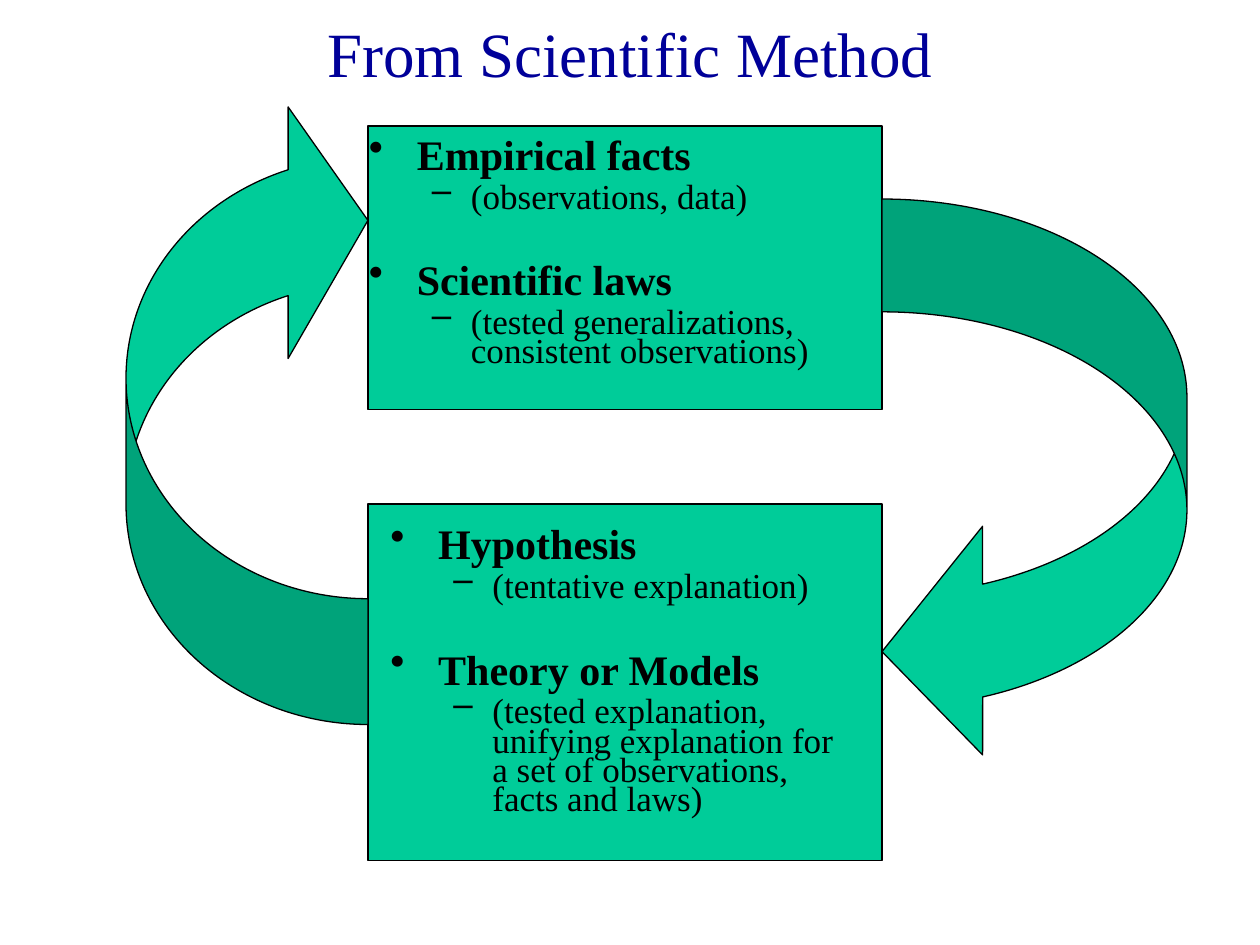
"""Build the scientific method cycle slide."""
import pptx
import pptx.util
import pptx.dml.color
import pptx.enum.shapes
import pptx.enum.text
import lxml.etree

COLORS = {"title": "000099", "fill": "00CC99", "ink": "000000"}
FONT = "Times New Roman"
TITLE = "From Scientific Method"
SHAPES = [
    ("RECTANGLE", (2.92, 4, 4.08, 2.83), 0, ()),
    ("RECTANGLE", (2.92, 1, 4.08, 2.25), 0, ()),
    ("CURVED_LEFT_ARROW", (7, 1.58, 2.42, 4.5), 0, (0.37, 0.75, 0.33)),
    ("CURVED_LEFT_ARROW", (1, 0.75, 1.92, 5), 180, (0.52, 1.04, 0.33)),
]
LISTS = [
    ((2.83, 1.08, 4, 2.17), [
        ("Empirical facts", "(observations, data)"),
        ("Scientific laws", "(tested generalizations, consistent observations)"),
    ]),
    ((3, 4.17, 3.83, 2.67), [
        ("Hypothesis", "(tentative explanation)"),
        ("Theory or Models", "(tested explanation, unifying explanation for "
                             "a set of observations, facts and laws)"),
    ]),
]
LEVELS = [
    {"size": 24, "bold": True, "bullet": "•", "margin": 0.38, "hang": 0.38},
    {"size": 20, "bold": False, "bullet": "–", "margin": 0.81, "hang": 0.31},
]
LINE_SPACING = 0.7
GROUP_GAP = 30


def rgb(name):
    return pptx.dml.color.RGBColor.from_string(COLORS[name])


def inches(values):
    return [pptx.util.Inches(v) for v in values]


def add_shape(slide, kind, box, rotation, adjustments):
    preset = getattr(pptx.enum.shapes.MSO_SHAPE, kind)
    sp = slide.shapes.add_shape(preset, *inches(box))
    sp.shadow.inherit = False
    sp.fill.solid()
    sp.fill.fore_color.rgb = rgb("fill")
    sp.line.color.rgb = rgb("ink")
    sp.line.width = pptx.util.Pt(0.75)
    sp.rotation = rotation
    for i, value in enumerate(adjustments):
        sp.adjustments[i] = value


def add_frame(slide, box):
    tf = slide.shapes.add_textbox(*inches(box)).text_frame
    tf.word_wrap = True
    return tf


def write(p, text, size, color="ink", bold=False, align="LEFT", before=0,
          spacing=1.0, bullet=None, margin=0, hang=0):
    p.alignment = getattr(pptx.enum.text.PP_ALIGN, align)
    p.space_before = pptx.util.Pt(before)
    p.line_spacing = spacing
    r = p.add_run()
    r.text = text
    r.font.name = FONT
    r.font.size = pptx.util.Pt(size)
    r.font.bold = bold
    r.font.color.rgb = rgb(color)
    if bullet:
        pPr = p._p.get_or_add_pPr()
        pPr.set("marL", str(pptx.util.Inches(margin)))
        pPr.set("indent", str(-pptx.util.Inches(hang)))
        tag = pptx.oxml.ns.qn("a:buChar")
        lxml.etree.SubElement(pPr, tag).set("char", bullet)


def add_list(slide, box, groups):
    tf = add_frame(slide, box)
    p = tf.paragraphs[0]
    for i, group in enumerate(groups):
        for level, text in enumerate(group):
            if i or level:
                p = tf.add_paragraph()
            p.level = level
            style = LEVELS[level]
            new_group = i > 0 and level == 0
            before = GROUP_GAP if new_group else 0.23 * style["size"]
            write(p, text, before=before, spacing=LINE_SPACING, **style)


def main():
    prs = pptx.Presentation()
    prs.slide_width, prs.slide_height = inches((10, 7.5))
    slide = prs.slides.add_slide(prs.slide_layouts[6])
    for shape in SHAPES[:2]:
        add_shape(slide, *shape)
    tf = add_frame(slide, (0.75, 0, 8.5, 0.83))
    tf.vertical_anchor = pptx.enum.text.MSO_ANCHOR.MIDDLE
    write(tf.paragraphs[0], TITLE, 36, color="title", align="CENTER")
    for box, groups in LISTS:
        add_list(slide, box, groups)
    for shape in SHAPES[2:]:
        add_shape(slide, *shape)
    prs.save("out.pptx")


if __name__ == "__main__":
    main()
